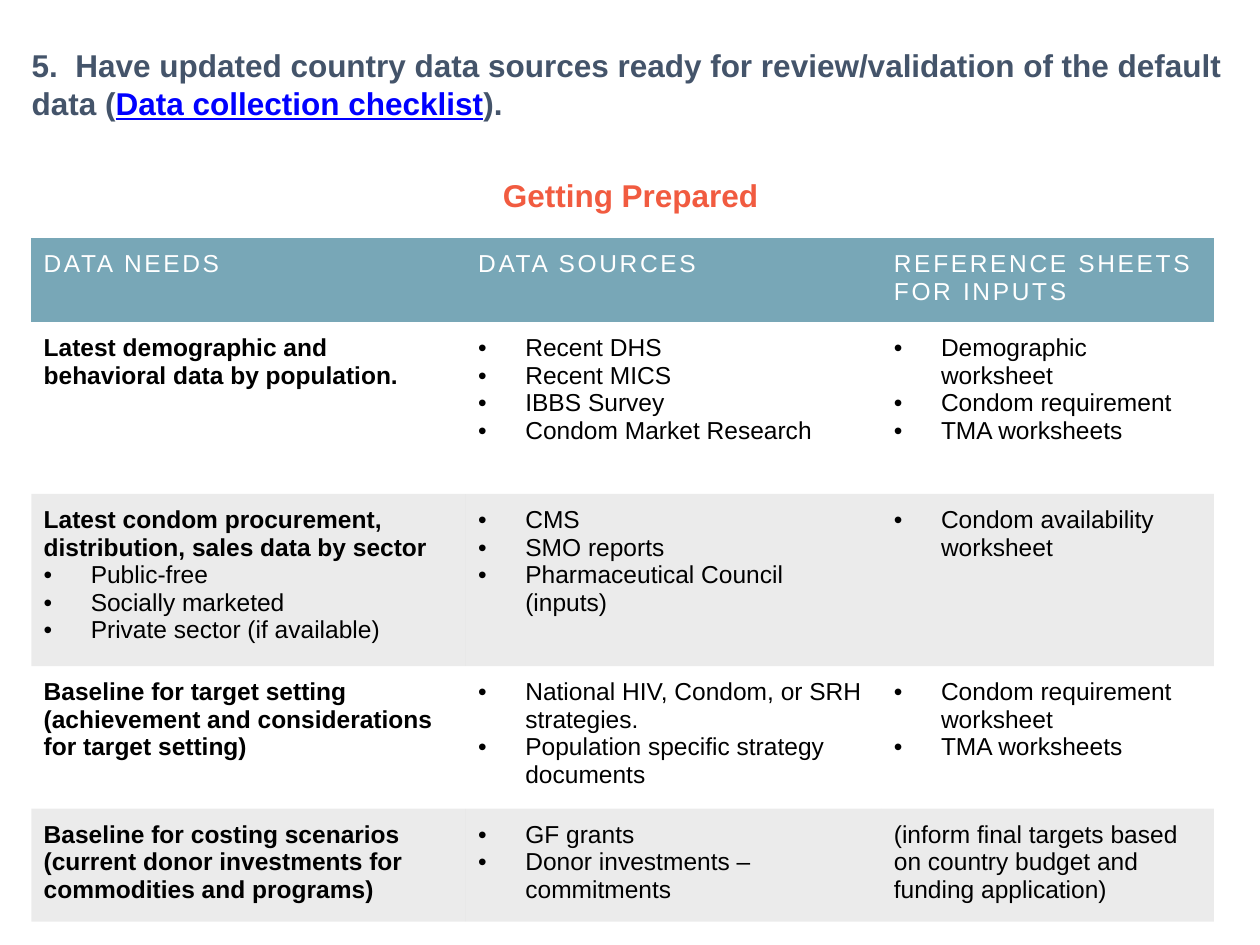
from dataclasses import dataclass

from lxml import etree
from pptx import Presentation
from pptx.dml.color import RGBColor
from pptx.enum.text import MSO_ANCHOR, PP_ALIGN
from pptx.oxml.ns import qn
from pptx.util import Cm, Pt

CENTER = PP_ALIGN.CENTER
LEFT = PP_ALIGN.LEFT
TOP = MSO_ANCHOR.TOP
MIDDLE = MSO_ANCHOR.MIDDLE

COLORS = {
    "title": "44546A",
    "link": "0000FF",
    "accent": "F15B40",
    "header": "78A7B7",
    "header_text": "FFFFFF",
    "body": "000000",
    "band": "000000",
}
FONT = "Arial"
BAND_OPACITY = 8
CELL_MARGIN = Cm(0.25)
BULLET_INDENT = Cm(0.95)
PLAIN_TABLE_STYLE = "{2D5ABB26-0587-4C30-8999-92F81FD0307C}"
COLUMN_WIDTHS = (8.76, 8.38, 6.7)
ROW_HEIGHTS = (1.67, 3.47, 3.47, 2.87, 2.28)


@dataclass(frozen=True)
class Entry:
    heading: str = ""
    bullets: tuple[str, ...] = ()
    bold: bool = False


@dataclass(frozen=True)
class Need:
    need: Entry
    sources: Entry
    sheets: Entry


HEADERS = ("DATA NEEDS", "DATA SOURCES", "REFERENCE SHEETS FOR INPUTS")
NEEDS = (
    Need(
        Entry("Latest demographic and behavioral data by population.", bold=True),
        Entry(bullets=("Recent DHS", "Recent MICS", "IBBS Survey", "Condom Market Research")),
        Entry(bullets=("Demographic worksheet", "Condom requirement", "TMA worksheets")),
    ),
    Need(
        Entry(
            "Latest condom procurement, distribution, sales data by sector",
            ("Public-free", "Socially marketed", "Private sector (if available)"),
            bold=True,
        ),
        Entry(bullets=("CMS", "SMO reports", "Pharmaceutical Council (inputs)")),
        Entry(bullets=("Condom availability worksheet",)),
    ),
    Need(
        Entry(
            "Baseline for target setting (achievement and considerations for target setting)",
            bold=True,
        ),
        Entry(
            bullets=(
                "National HIV, Condom, or SRH strategies.",
                "Population specific strategy documents",
            )
        ),
        Entry(bullets=("Condom requirement worksheet", "TMA worksheets")),
    ),
    Need(
        Entry(
            "Baseline for costing scenarios (current donor investments for commodities and programs)",
            bold=True,
        ),
        Entry(bullets=("GF grants", "Donor investments – commitments")),
        Entry("(inform final targets based on country budget and funding application)"),
    ),
)


def add_span(para, text: str, *, size: int = 14, color: str = "body", bold: bool = False,
             underline: bool = False, spacing: float = 0) -> None:
    span = para.add_run()
    span.text = text
    span.font.name = FONT
    span.font.size = Pt(size)
    span.font.bold = bold
    span.font.underline = underline
    span.font.color.rgb = RGBColor.from_string(COLORS[color])
    if spacing:
        span.font._element.set("spc", str(round(spacing * 100)))


def add_bullet(para) -> None:
    properties = para._p.get_or_add_pPr()
    properties.set("marL", str(BULLET_INDENT))
    properties.set("indent", str(-BULLET_INDENT))
    etree.SubElement(properties, qn("a:buFont"), typeface=FONT)
    etree.SubElement(properties, qn("a:buChar"), char="•")


def add_box(page, left: float, top: float, width: float, height: float, *,
            anchor=TOP, align=LEFT, side_margin: float = 0.25):
    box = page.shapes.add_textbox(Cm(left), Cm(top), Cm(width), Cm(height))
    frame = box.text_frame
    frame.word_wrap = True
    frame.vertical_anchor = anchor
    frame.margin_left = frame.margin_right = Cm(side_margin)
    para = frame.paragraphs[0]
    para.alignment = align
    return para


def fill_cell(cell, color: str, opacity: int = 100) -> None:
    cell.fill.solid()
    cell.fill.fore_color.rgb = RGBColor.from_string(COLORS[color])
    if opacity < 100:
        tint = cell._tc.tcPr.find(".//" + qn("a:srgbClr"))
        etree.SubElement(tint, qn("a:alpha"), val=str(opacity * 1000))


def write_entry(cell, entry: Entry) -> None:
    frame = cell.text_frame
    lines = [(entry.heading, False)] if entry.heading else []
    lines += [(bullet, True) for bullet in entry.bullets]
    for index, (text, bulleted) in enumerate(lines):
        para = frame.add_paragraph() if index else frame.paragraphs[0]
        if bulleted:
            add_bullet(para)
        add_span(para, text, bold=entry.bold and not bulleted)


def add_needs_table(page) -> None:
    frame = page.shapes.add_table(
        len(ROW_HEIGHTS), len(COLUMN_WIDTHS), Cm(0.63), Cm(4.8),
        Cm(sum(COLUMN_WIDTHS)), Cm(sum(ROW_HEIGHTS)),
    )
    table = frame.table
    table.horz_banding = False
    table._tbl.tblPr.find(qn("a:tableStyleId")).text = PLAIN_TABLE_STYLE
    for column, width in zip(table.columns, COLUMN_WIDTHS):
        column.width = Cm(width)
    for row, height in zip(table.rows, ROW_HEIGHTS):
        row.height = Cm(height)
    for cell in table.iter_cells():
        cell.margin_left = cell.margin_right = CELL_MARGIN
        cell.margin_top = cell.margin_bottom = CELL_MARGIN
    for cell, text in zip(table.rows[0].cells, HEADERS):
        add_span(cell.text_frame.paragraphs[0], text, color="header_text", spacing=1.5)
        fill_cell(cell, "header")
    for number, need in enumerate(NEEDS, start=1):
        entries = (need.need, need.sources, need.sheets)
        for cell, entry in zip(table.rows[number].cells, entries):
            write_entry(cell, entry)
            if number % 2 == 0:
                fill_cell(cell, "band", BAND_OPACITY)
            else:
                cell.fill.background()


def main() -> None:
    deck = Presentation()
    deck.slide_width, deck.slide_height = Cm(25.4), Cm(19.05)
    page = deck.slides.add_slide(deck.slide_layouts[6])

    title = add_box(page, 0.39, 0.81, 24.61, 1.8)
    add_span(
        title,
        "5.  Have updated country data sources ready for review/validation of the default data (",
        size=18, color="title", bold=True,
    )
    add_span(title, "Data collection checklist", size=18, color="link", bold=True, underline=True)
    add_span(title, ").", size=18, color="title", bold=True)

    add_needs_table(page)

    subtitle = add_box(page, 4.4, 3.03, 16.63, 1.8, anchor=MIDDLE, align=CENTER, side_margin=0.18)
    add_span(subtitle, "Getting Prepared", size=18, color="accent", bold=True)

    deck.save("out.pptx")


if __name__ == "__main__":
    main()
